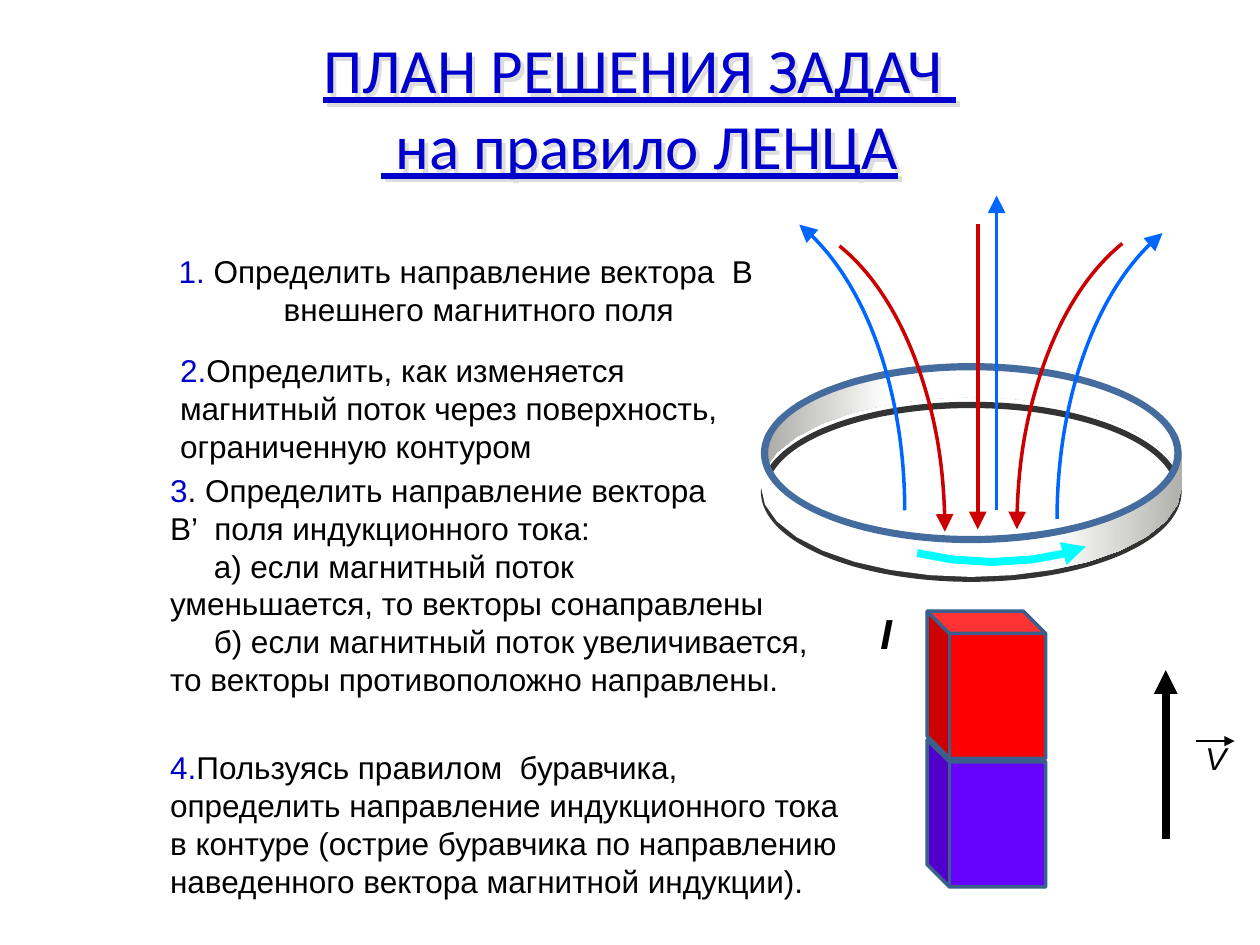
"""Build the slide on solving problems with Lenz's rule."""
from dataclasses import dataclass, field
from math import cos, pi, sin

from lxml import etree
from pptx import Presentation
from pptx import util as u
from pptx.dml import color
from pptx.enum import shapes, text
from pptx.oxml import ns

BLUE, BLACK, RED, SKY, CYAN = "0000CC", "000000", "CC0000", "0066FF", "00FFFF"
EDGE, RIM, BASE = "3A5F8C", "446C9E", "333333"
FIELD_SIZE = (7.34, 12.7)
RING_LEFT, RING_TOP, RING_WIDTH, RING_HEIGHT, RING_DROP = 15.34, 7.32, 8.48, 3.63, 0.78
ARC_STEPS = 16


@dataclass
class Line:
    runs: list[tuple[str, str]]
    indent: float = 0


@dataclass
class Note:
    box: tuple[float, float, float, float]
    lines: list[Line]
    style: dict = field(default_factory=dict)
    align: text.PP_ALIGN = text.PP_ALIGN.LEFT
    anchor: text.MSO_ANCHOR = text.MSO_ANCHOR.TOP


@dataclass
class Arrow:
    start: tuple[float, float]
    end: tuple[float, float]
    hue: str
    width: float
    head: str = "med"


@dataclass
class FieldArc:
    corner: tuple[float, float]
    hue: str
    arrow_end: str
    mirrored: bool


NOTES = [
    Note((3.5, 0.76, 18.8, 2.77), [Line([("ПЛАН РЕШЕНИЯ ЗАДАЧ \v на правило ЛЕНЦА", BLUE)])],
         {"name": "Calibri", "size": u.Pt(36), "underline": True},
         text.PP_ALIGN.CENTER, text.MSO_ANCHOR.MIDDLE),
    Note((3.35, 4.95, 12.7, 1.78), [
        Line([("1.", BLUE), (" Определить направление вектора  В", BLACK)]),
        Line([("внешнего магнитного поля", BLACK)], 2.12)]),
    Note((3.38, 6.96, 11.4, 2.54), [
        Line([("2.", BLUE), ("Определить, как изменяется магнитный поток через "
                             "поверхность, ограниченную контуром", BLACK)])]),
    Note((3.18, 9.37, 13.41, 4.88), [
        Line([("3", BLUE), (". Определить направление вектора", BLACK)]),
        Line([("В’  поля индукционного тока:", BLACK)]),
        Line([("а) если магнитный поток\vуменьшается, то векторы сонаправлены", BLACK)], 0.88),
        Line([("б) если магнитный поток увеличивается, то векторы "
               "противоположно направлены.", BLACK)], 0.88)]),
    Note((3.18, 14.96, 14.45, 3.33), [
        Line([("4.", BLUE), ("Пользуясь правилом  буравчика,", BLACK)]),
        Line([("определить направление индукционного тока", BLACK)]),
        Line([("в контуре (острие буравчика по направлению наведенного "
               "вектора магнитной индукции).", BLACK)])]),
    Note((24.05, 14.78, 1.1, 1.02), [Line([("V", BLACK)])], {"italic": True}),
    Note((17.5, 12.12, 0.85, 1.27), [Line([("I", BLACK)])],
         {"size": u.Pt(24), "bold": True, "italic": True}),
]
ARROWS = [
    Arrow((23.5, 16.92), (23.5, 13.51), BLACK, 4.5),
    Arrow((24.1, 14.94), (24.89, 14.94), BLACK, 0.75),
    Arrow((19.71, 4.52), (19.71, 10.67), RED, 2, "lg"),
    Arrow((20.09, 10.29), (20.09, 3.94), SKY, 2, "lg"),
]
FIELD_ARCS = [
    FieldArc((20.5, 4.32), RED, "tailEnd", True),
    FieldArc((11.71, 4.37), RED, "tailEnd", False),
    FieldArc((21.31, 4.11), SKY, "headEnd", True),
    FieldArc((10.9, 3.94), SKY, "headEnd", False),
]
MAGNET = [((18.69, 14.91), "6600FF"), ((18.69, 12.32), "FF0000")]
CURRENT = [(18.49, 11.15), (19.2, 11.28), (20, 11.33), (20.8, 11.28), (21.4, 11.17), (21.89, 11.02)]


def rgb(code: str) -> color.RGBColor:
    return color.RGBColor.from_string(code)


def stroke(item, hue: str, width: float, arrow_end: str = "", head: str = "med") -> None:
    item.line.color.rgb = rgb(hue)
    item.line.width = u.Pt(width)
    if arrow_end:
        etree.SubElement(item.line._get_or_add_ln(), ns.qn(f"a:{arrow_end}"),
                         type="triangle", w=head, len=head)


def write_note(slide, note: Note):
    box = slide.shapes.add_textbox(*map(u.Cm, note.box))
    frame = box.text_frame
    frame.word_wrap = True
    frame.vertical_anchor = note.anchor
    style = {"name": "Arial", "size": u.Pt(18)} | note.style
    for index, line in enumerate(note.lines):
        paragraph = frame.paragraphs[0] if index == 0 else frame.add_paragraph()
        paragraph.alignment = note.align
        if line.indent:
            paragraph._p.get_or_add_pPr().set("indent", str(u.Cm(line.indent)))
        for words, hue in line.runs:
            for order, piece in enumerate(words.split("\v")):
                if order:
                    paragraph.add_line_break()
                run = paragraph.add_run()
                run.text = piece
                for key, value in style.items():
                    setattr(run.font, key, value)
                run.font.color.rgb = rgb(hue)
    return box


def cast_shadow(box) -> None:
    effects = etree.SubElement(box._element.spPr, ns.qn("a:effectLst"))
    shadow = etree.SubElement(effects, ns.qn("a:outerShdw"), dist="38100", dir="2700000")
    etree.SubElement(shadow, ns.qn("a:srgbClr"), val="DDDDDD")


def draw_arrow(slide, arrow: Arrow) -> None:
    line = slide.shapes.add_connector(
        shapes.MSO_CONNECTOR.STRAIGHT, *map(u.Cm, arrow.start + arrow.end))
    stroke(line, arrow.hue, arrow.width, "tailEnd", arrow.head)
    etree.SubElement(line._element.spPr, ns.qn("a:effectLst"))


def draw_preset(slide, kind, box: tuple, adjust: list[float], fill: str = "", mirrored: bool = False):
    item = slide.shapes.add_shape(kind, *map(u.Cm, box))
    item.shadow.inherit = False
    for index, value in enumerate(adjust):
        item.adjustments[index] = value
    if fill:
        item.fill.solid()
        item.fill.fore_color.rgb = rgb(fill)
    else:
        item.fill.background()
    if mirrored:
        item._element.spPr.xfrm.set("flipH", "1")
    return item


def draw_outline(slide, points: list[tuple[float, float]], closed: bool):
    corners = [(u.Cm(x), u.Cm(y)) for x, y in points]
    builder = slide.shapes.build_freeform(*corners[0])
    builder.add_line_segments(corners[1:], close=closed)
    item = builder.convert_to_shape()
    item.shadow.inherit = False
    return item


def half_ellipse(side: int, drop: float) -> list[tuple[float, float]]:
    rx, ry = RING_WIDTH / 2, RING_HEIGHT / 2
    angles = [pi * step / ARC_STEPS for step in range(ARC_STEPS + 1)]
    return [(RING_LEFT + rx - rx * cos(angle), RING_TOP + ry + drop + side * ry * sin(angle))
            for angle in angles]


def draw_wall(slide, side: int, hues: tuple[str, str], places: tuple[float, float]) -> None:
    outline = half_ellipse(side, 0) + half_ellipse(side, RING_DROP - 0.1)[::-1]
    wall = draw_outline(slide, outline, True)
    wall.line.fill.background()
    wall.fill.gradient()
    wall.fill.gradient_angle = 0
    for stop, hue, place in zip(wall.fill.gradient_stops, hues, places):
        stop.color.rgb = rgb(hue)
        stop.position = place


def draw_rim(slide, drop: float, hue: str, thickness: float) -> None:
    box = (RING_LEFT, RING_TOP + drop, RING_WIDTH, RING_HEIGHT)
    draw_preset(slide, shapes.MSO_SHAPE.DONUT, box, [thickness], hue).line.fill.background()


def main() -> None:
    deck = Presentation()
    deck.slide_width, deck.slide_height = u.Cm(25.4), u.Cm(19.05)
    slide = deck.slides.add_slide(deck.slide_layouts[6])
    title, *_ = [write_note(slide, note) for note in NOTES]
    cast_shadow(title)
    for corner, fill in MAGNET:
        pole = draw_preset(slide, shapes.MSO_SHAPE.CUBE, (*corner, 2.39, 2.97), [0.189], fill, True)
        stroke(pole, EDGE, 2)
    draw_wall(slide, -1, ("A8A8A4", "FFFFFF"), (0, 0.3))
    draw_rim(slide, RING_DROP, BASE, 0.035)
    draw_wall(slide, 1, ("FFFFFF", "B0B0AC"), (0.7, 1))
    draw_rim(slide, 0, RIM, 0.04)
    for arc in FIELD_ARCS:
        curve = draw_preset(slide, shapes.MSO_SHAPE.ARC, arc.corner + FIELD_SIZE,
                            [171, 0], mirrored=arc.mirrored)
        stroke(curve, arc.hue, 2, arc.arrow_end, "lg")
    for arrow in ARROWS:
        draw_arrow(slide, arrow)
    current = draw_outline(slide, CURRENT, False)
    current.fill.background()
    stroke(current, CYAN, 4.5, "tailEnd")
    deck.save("out.pptx")


if __name__ == "__main__":
    main()
